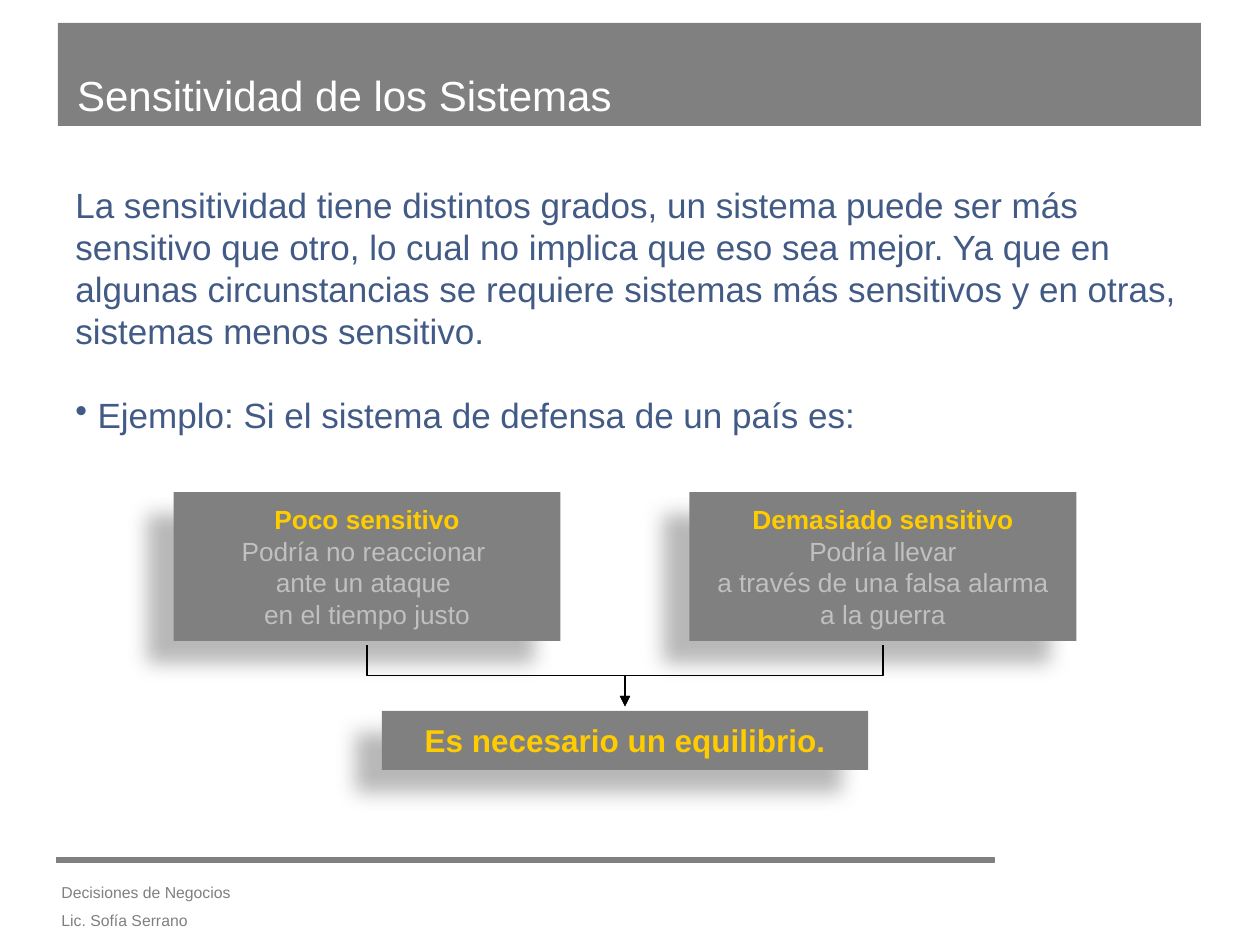
"""Build the slide on how sensitive systems should be."""
from typing import NamedTuple

from lxml.etree import SubElement as Sub
from pptx import Presentation
from pptx.dml.color import RGBColor
from pptx.enum.shapes import MSO_CONNECTOR as Link, MSO_SHAPE as Form
from pptx.enum.text import MSO_ANCHOR as Anchor, PP_ALIGN as Align
from pptx.oxml.ns import qn
from pptx.util import Cm, Pt

GRAY = RGBColor(0x80, 0x80, 0x80)
SILVER = RGBColor(0xC0, 0xC0, 0xC0)
GOLD = RGBColor(0xFF, 0xCC, 0x00)
BLUE = RGBColor(0x42, 0x5B, 0x86)
WHITE = RGBColor(0xFF, 0xFF, 0xFF)
BLACK = RGBColor(0, 0, 0)


class Area(NamedTuple):
    x: float
    y: float
    w: float
    h: float

    def lengths(self) -> list:
        return [Cm(n) for n in self]


class Card(NamedTuple):
    area: Area
    size: int
    head: str
    lines: tuple = ()


CARDS = (
    Card(Area(3.5, 9.92, 7.8, 3), 15, "Poco sensitivo",
         ("Podría no reaccionar ", "ante un ataque ", "en el tiempo justo")),
    Card(Area(13.9, 9.92, 7.8, 3), 15, "Demasiado sensitivo",
         (" Podría llevar ", "a través de una falsa alarma", "a la guerra")),
    Card(Area(7.7, 14.33, 9.8, 1.19), 18, "Es necesario un equilibrio."),
)
BODY = (
    "La sensitividad tiene distintos grados, un sistema puede ser más sensitivo "
    "que otro, lo cual no implica que eso sea mejor. Ya que en algunas "
    "circunstancias se requiere sistemas más sensitivos y en otras, sistemas "
    "menos sensitivo.",
    " Ejemplo: Si el sistema de defensa de un país es:",
)
FOOT = ("Decisiones de Negocios", "Lic. Sofía Serrano")


def style(item, form: dict) -> None:
    """Set each value of the dict on the item."""
    for name, value in form.items():
        setattr(item, name, value)


def write(frame, lines, size: int, color: RGBColor, **form):
    """Fill a frame with one paragraph a line and return the paragraphs."""
    for i, line in enumerate(lines):
        para = frame.add_paragraph() if i else frame.paragraphs[0]
        run = para.add_run()
        run.text = line
        style(run.font, {"name": "Arial", "size": Pt(size), "bold": False})
        run.font.color.rgb = color
        style(para, form)
    return frame.paragraphs


def add_text(slide, area: Area, lines, size: int, color: RGBColor, **form):
    """Add a wrapped text box and return its paragraphs."""
    frame = slide.shapes.add_textbox(*area.lengths()).text_frame
    frame.word_wrap = True
    return write(frame, lines, size, color, **form)


def add_bar(slide, area: Area):
    """Add a plain gray rectangle."""
    bar = slide.shapes.add_shape(Form.RECTANGLE, *area.lengths())
    bar.shadow.inherit = False
    bar.fill.solid()
    bar.fill.fore_color.rgb = GRAY
    bar.line.fill.background()
    return bar


def add_card(slide, card: Card) -> None:
    """Add a gray card with a soft shadow, a gold head and silver lines."""
    box = add_bar(slide, card.area)
    cast = Sub(box._element.spPr.find(qn("a:effectLst")), qn("a:outerShdw"),
               blurRad=str(Pt(11.8)), dist=str(Pt(19.7)), dir=str(141 * 60000),
               algn="ctr", rotWithShape="0")
    tint = Sub(cast, qn("a:srgbClr"), val=str(BLACK))
    Sub(tint, qn("a:alpha"), val="28000")
    frame = box.text_frame
    style(frame, {"word_wrap": False, "vertical_anchor": Anchor.MIDDLE})
    paras = write(frame, (card.head, *card.lines), card.size, SILVER,
                  alignment=Align.CENTER)
    head = paras[0].runs[0].font
    head.bold = True
    head.color.rgb = GOLD


def add_link(slide, top: Area, low: Area) -> None:
    """Add an elbow arrow that runs down, across and down between two areas."""
    gap = 0.09
    x1, x2 = top.x + top.w / 2, low.x + low.w / 2
    y1, y2 = top.y + top.h + gap, low.y - gap
    mid_x, mid_y = (x1 + x2) / 2, (y1 + y2) / 2
    half_w, half_h = (y2 - y1) / 2, abs(x2 - x1) / 2
    side = 1 if x1 < x2 else -1
    link = slide.shapes.add_connector(
        Link.ELBOW, Cm(mid_x + side * half_w), Cm(mid_y - half_h),
        Cm(mid_x - side * half_w), Cm(mid_y + half_h))
    props = link._element.spPr
    turn = 270 if side > 0 else 90
    props.find(qn("a:xfrm")).set("rot", str(turn * 60000))
    link.line.color.rgb = BLACK
    link.line.width = Pt(0.75)
    Sub(props.find(qn("a:ln")), qn("a:tailEnd"), type="triangle")
    Sub(props, qn("a:effectLst"))


def add_title(slide, area: Area, words: str) -> None:
    """Place the title on top of what is drawn so far."""
    title = slide.shapes.title
    style(title, dict(zip(("left", "top", "width", "height"), area.lengths())))
    title.text_frame.vertical_anchor = Anchor.MIDDLE
    write(title.text_frame, (words,), 24, WHITE, alignment=Align.LEFT)
    slide.shapes._spTree.append(title._element)


def main() -> None:
    """Draw the slide and save it."""
    deck = Presentation()
    style(deck, {"slide_width": Cm(25.4), "slide_height": Cm(19.05)})
    slide = deck.slides.add_slide(deck.slide_layouts[5])
    add_bar(slide, Area(1.17, 0.46, 23.04, 2.08))
    rule = add_bar(slide, Area(1.14, 17.29, 18.9, 0.1))
    rule.line.color.rgb = GRAY
    rule.line.width = Pt(0.75)
    add_text(slide, Area(0.99, 17.48, 7.75, 1.4), FOOT, 9, GRAY, line_spacing=1.5)
    add_title(slide, Area(1.3, 1.19, 22.91, 1.42), "Sensitividad de los Sistemas")
    example = add_text(slide, Area(1.27, 3.58, 22.86, 5.69), BODY, 20, BLUE)[1]
    example.space_before = Pt(24)
    props = example._p.get_or_add_pPr()
    props.set("marL", "0")
    props.set("indent", "0")
    Sub(props, qn("a:buChar"), char="•")
    for card in CARDS:
        add_card(slide, card)
    *tops, low = CARDS
    for card in tops:
        add_link(slide, card.area, low.area)
    deck.save("out.pptx")


if __name__ == "__main__":
    main()
